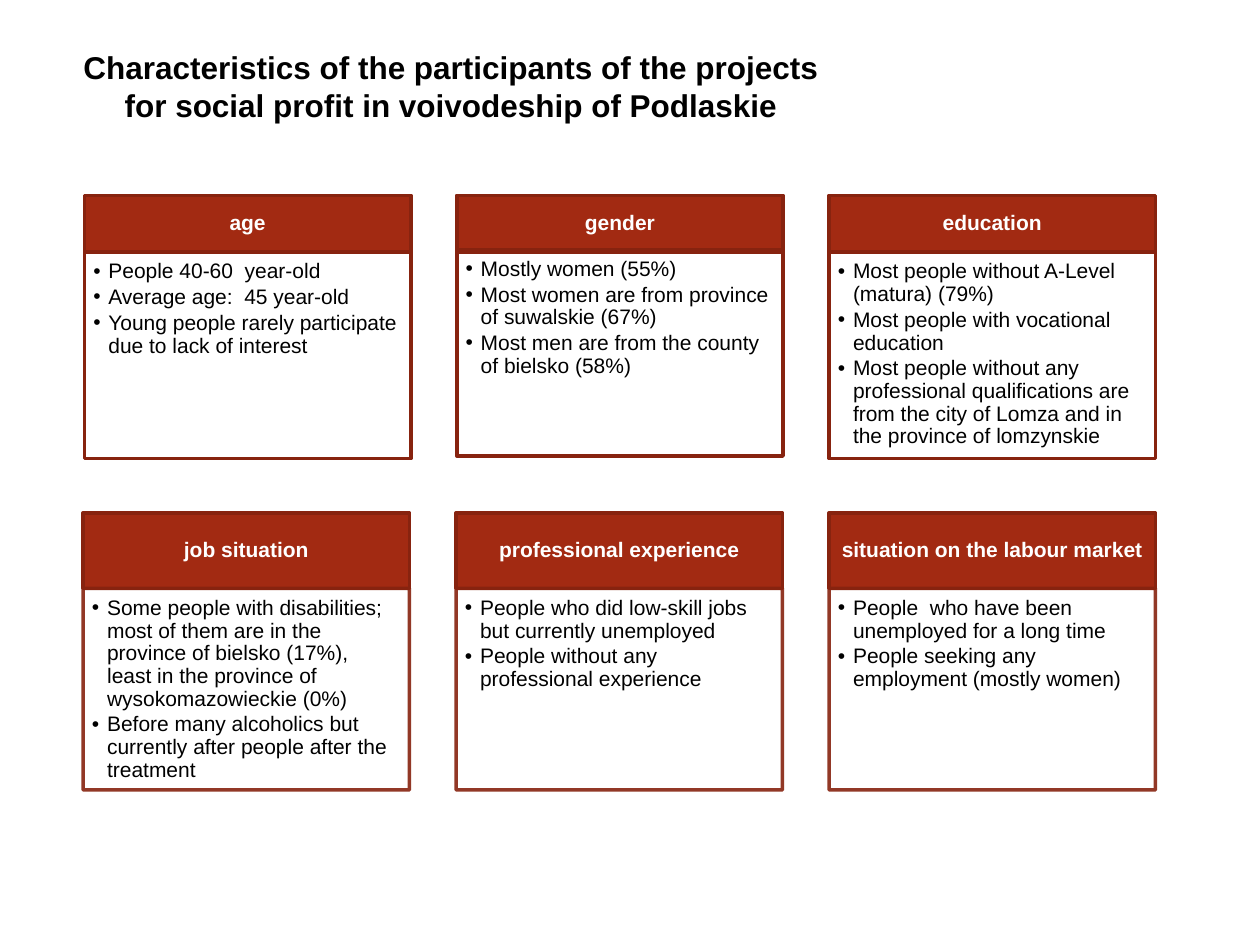
"""Build the slide on participants of the projects for social profit."""
from lxml import etree
from pptx import Presentation
from pptx.dml.color import RGBColor
from pptx.enum import shapes, text
from pptx.oxml import ns
from pptx.util import Inches, Pt

BLACK = RGBColor(0x00, 0x00, 0x00)
WHITE = RGBColor(0xFF, 0xFF, 0xFF)
BRICK = RGBColor(0xA2, 0x2A, 0x12)
DARK_BRICK = RGBColor(0x87, 0x23, 0x0F)

CARD_WIDTH = 2.59
LAST_LEFT = 6.58

ROWS = [
    {"left": 0.67, "top": 1.55, "header": 0.45, "body": 1.64, "opacity": 100, "cards": [
        ("age", 2, ["People 40-60  year-old",
                    "Average age:  45 year-old",
                    "Young people rarely participate due to lack of interest"]),
        ("gender", 1.98, ["Mostly women (55%)",
                          "Most women are from province of suwalskie (67%)",
                          "Most men are from the county of bielsko (58%)"]),
        ("education", 2, ["Most people without A-Level (matura) (79%)",
                          "Most people with vocational  education",
                          "Most people without any professional qualifications are from "
                          "the city of Lomza and in the province of lomzynskie"]),
    ]},
    {"left": 0.66, "top": 4.07, "header": 0.6, "body": 1.6, "opacity": 90, "cards": [
        ("job situation", 4.67, [
            "Some people with disabilities; most of them are in the province of bielsko (17%), "
            "least in the province of wysokomazowieckie (0%)",
            "Before many alcoholics but currently after people after the treatment"]),
        ("professional experience", 4.67, [
            "People who did low-skill jobs  but currently unemployed",
            "People without any professional experience"]),
        ("situation on the labour market", 4.67, [
            "People  who have been unemployed for a long time",
            "People seeking any employment (mostly women)"]),
    ]},
]


def write(shape, lines, size=12, color=BLACK, bold=False, align=text.PP_ALIGN.LEFT,
          anchor=text.MSO_ANCHOR.TOP, insets=(0.1, 0.05, 0.1, 0.05),
          line_spacing=1.0, space_after=0, bullet=None):
    frame = shape.text_frame
    frame.word_wrap = True
    frame.vertical_anchor = anchor
    (frame.margin_left, frame.margin_top,
     frame.margin_right, frame.margin_bottom) = map(Inches, insets)
    for index, line in enumerate(lines):
        paragraph = frame.add_paragraph() if index else frame.paragraphs[0]
        paragraph.text = line
        paragraph.alignment = align
        paragraph.line_spacing = line_spacing
        paragraph.space_after = Pt(space_after)
        if bullet:
            properties = paragraph._p.get_or_add_pPr()
            properties.set("marL", str(Inches(0.12)))
            properties.set("indent", str(Inches(-0.12)))
            etree.SubElement(properties, ns.qn("a:buFont"), typeface="Arial")
            etree.SubElement(properties, ns.qn("a:buChar"), char=bullet)
        font = paragraph.font
        font.name = "Arial"
        font.size = Pt(size)
        font.bold = bold
        font.color.rgb = color


def add_box(slide, left, top, height, fill=None, opacity=100):
    box = slide.shapes.add_shape(shapes.MSO_SHAPE.RECTANGLE, Inches(left), Inches(top),
                                 Inches(CARD_WIDTH), Inches(height))
    box.shadow.inherit = False
    if fill is None:
        box.fill.background()
    else:
        box.fill.solid()
        box.fill.fore_color.rgb = fill
    box.line.color.rgb = DARK_BRICK
    box.line.width = Pt(2)
    if opacity < 100:
        line_color = box.line._ln.find(".//" + ns.qn("a:srgbClr"))
        etree.SubElement(line_color, ns.qn("a:alpha"), val=str(opacity * 1000))
    return box


presentation = Presentation()
presentation.slide_width = Inches(10)
presentation.slide_height = Inches(7.5)
slide = presentation.slides.add_slide(presentation.slide_layouts[6])

title = slide.shapes.add_textbox(Inches(0.43), Inches(0.36), Inches(6.3), Inches(0.64))
write(title, ["Characteristics of the participants of the projects "
              "for social profit in voivodeship of Podlaskie"],
      size=18, bold=True, align=text.PP_ALIGN.CENTER, anchor=text.MSO_ANCHOR.MIDDLE)

for row in ROWS:
    pitch = (LAST_LEFT - row["left"]) / 2
    for column, (heading, body_top, points) in enumerate(row["cards"]):
        left = row["left"] + column * pitch
        header = add_box(slide, left, row["top"], row["header"], fill=BRICK)
        write(header, [heading], color=WHITE, bold=True, align=text.PP_ALIGN.CENTER,
              anchor=text.MSO_ANCHOR.MIDDLE, insets=(0.09, 0.05, 0.09, 0.05),
              line_spacing=0.9)
        body = add_box(slide, left, body_top, row["body"], opacity=row["opacity"])
        write(body, points, insets=(0.07, 0.07, 0.09, 0.1), line_spacing=0.9,
              space_after=1.8, bullet="•")

presentation.save("out.pptx")
